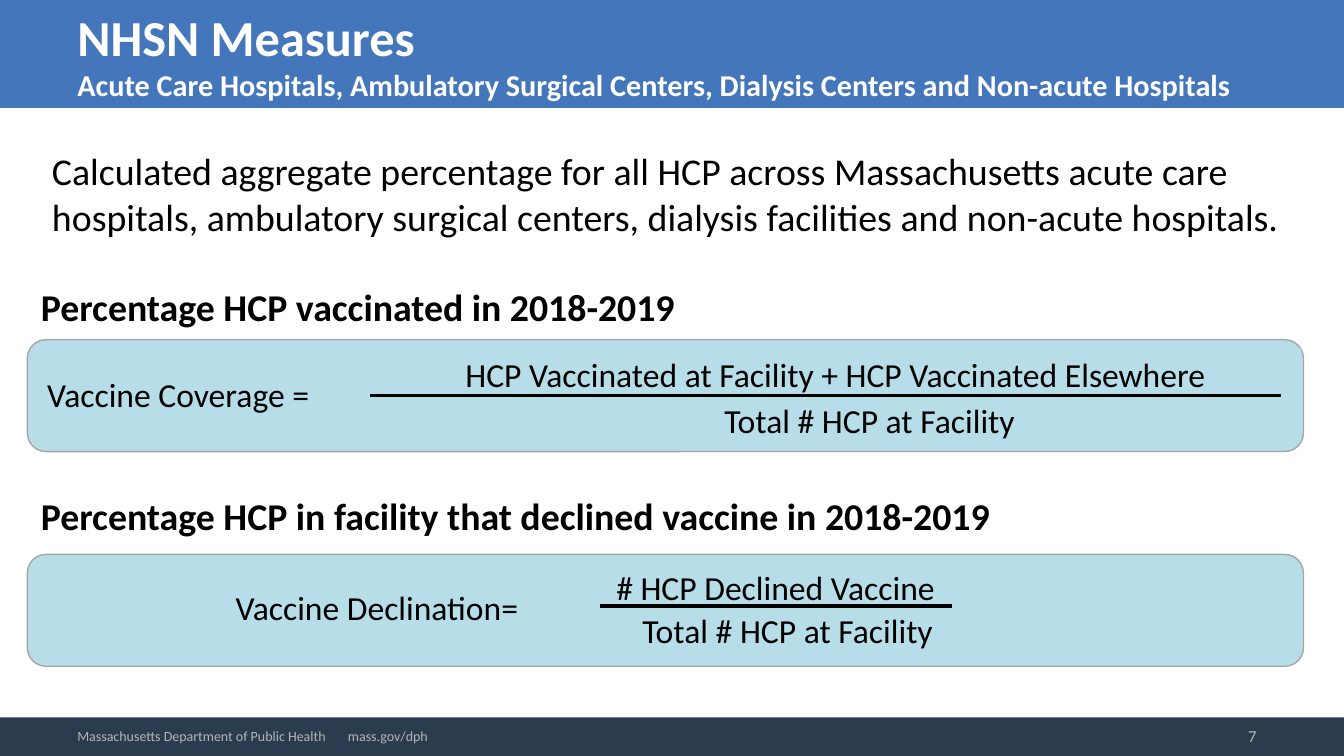
from dataclasses import dataclass

from lxml.etree import SubElement
from pptx import Presentation
from pptx.dml.color import RGBColor
from pptx.enum.shapes import MSO_CONNECTOR, MSO_SHAPE
from pptx.enum.text import MSO_ANCHOR, MSO_AUTO_SIZE, PP_ALIGN
from pptx.oxml.ns import qn
from pptx.util import Cm, Pt

BLUE = RGBColor(0x43, 0x76, 0xBB)
NAVY = RGBColor(0x2A, 0x3C, 0x4E)
PALE = RGBColor(0xB7, 0xDE, 0xE8)
GREY = RGBColor(0xA6, 0xA6, 0xA6)
SILVER = RGBColor(0xB5, 0xB5, 0xB5)
WHITE = RGBColor(0xFF, 0xFF, 0xFF)
BLACK = RGBColor(0, 0, 0)
FONT = "Calibri"
WIDTH, HEIGHT = 33.87, 19.05


@dataclass(frozen=True)
class Box:
    left: float
    top: float
    width: float
    height: float

    def lengths(self) -> tuple:
        return Cm(self.left), Cm(self.top), Cm(self.width), Cm(self.height)


@dataclass(frozen=True)
class Term:
    text: str
    box: Box
    align: PP_ALIGN = PP_ALIGN.CENTER


@dataclass(frozen=True)
class Formula:
    heading: str
    heading_box: Box
    panel: Box
    terms: tuple[Term, ...]
    bar_left: float
    bar_right: float
    bar_y: float


FORMULAS = (
    Formula(
        "Percentage HCP vaccinated in 2018-2019",
        Box(0.69, 6.99, 26.8, 1.5),
        Box(0.69, 8.56, 32.16, 2.82),
        (
            Term("Vaccine Coverage =", Box(0.94, 9.3, 13.72, 1.3), PP_ALIGN.LEFT),
            Term("HCP Vaccinated at Facility + HCP Vaccinated Elsewhere",
                 Box(9.32, 8.79, 23.47, 1.3)),
            Term("Total # HCP at Facility", Box(15.11, 9.96, 13.61, 1.3)),
        ),
        9.32, 32.28, 9.96,
    ),
    Formula(
        "Percentage HCP in facility that declined vaccine in 2018-2019",
        Box(0.69, 12.24, 32.16, 1.5),
        Box(0.69, 13.97, 32.16, 2.82),
        (
            Term("Vaccine Declination=", Box(5.69, 14.66, 9.42, 1.27), PP_ALIGN.LEFT),
            Term("# HCP Declined Vaccine", Box(13.64, 14.15, 11.81, 1.27)),
            Term("Total # HCP at Facility", Box(13.41, 15.24, 12.88, 1.27)),
        ),
        15.11, 23.98, 15.27,
    ),
)


def add_run(p, text: str, *, size: float, color: RGBColor = BLACK, bold: bool = False) -> None:
    r = p.add_run()
    r.text = text
    r.font.name = FONT
    r.font.size = Pt(size)
    r.font.bold = bold
    r.font.color.rgb = color


def write(sp, text: str, *, size: float, color: RGBColor = BLACK, bold: bool = False,
          align: PP_ALIGN = PP_ALIGN.LEFT, anchor: MSO_ANCHOR = MSO_ANCHOR.TOP,
          inset: tuple[float, float] = (0.25, 0.13)):
    tf = sp.text_frame
    tf.word_wrap = True
    tf.auto_size = MSO_AUTO_SIZE.NONE
    tf.vertical_anchor = anchor
    tf.margin_left = tf.margin_right = Cm(inset[0])
    tf.margin_top = tf.margin_bottom = Cm(inset[1])
    p = tf.paragraphs[0]
    p.alignment = align
    p.space_before = Pt(0)
    add_run(p, text, size=size, color=color, bold=bold)
    return p


def place(sp, box: Box):
    sp.left, sp.top, sp.width, sp.height = box.lengths()
    return sp


def add_box(shapes, box: Box, fill: RGBColor, kind: MSO_SHAPE = MSO_SHAPE.RECTANGLE):
    sp = shapes.add_shape(kind, *box.lengths())
    sp.shadow.inherit = False
    sp.fill.solid()
    sp.fill.fore_color.rgb = fill
    sp.line.fill.background()
    return sp


def add_formula(s, formula: Formula) -> None:
    shapes = s.shapes.add_group_shape().shapes
    panel = add_box(shapes, formula.panel, PALE, MSO_SHAPE.ROUNDED_RECTANGLE)
    panel.line.color.rgb = GREY
    panel.line.width = Pt(1)
    for term in formula.terms:
        write(add_box(shapes, term.box, PALE), term.text, size=24, align=term.align)
    y = Cm(formula.bar_y)
    bar = shapes.add_connector(MSO_CONNECTOR.STRAIGHT, Cm(formula.bar_left), y,
                               Cm(formula.bar_right), y)
    bar.line.color.rgb = BLACK
    bar.line.width = Pt(2.25)
    SubElement(bar.element.spPr, qn("a:effectLst"))
    heading = s.shapes.add_textbox(*formula.heading_box.lengths())
    write(heading, formula.heading, size=27, bold=True, inset=(0.34, 0.17))


def add_footer(s) -> None:
    sp = s.shapes.add_textbox(*Box(24.33, 18.03, 7.59, 1.02).lengths())
    write(sp, "7", size=12, color=SILVER, align=PP_ALIGN.RIGHT, anchor=MSO_ANCHOR.MIDDLE)
    sp = s.shapes.add_textbox(*Box(1.7, 18.08, 10.59, 0.94).lengths())
    p = write(sp, "Massachusetts Department of Public Health\tmass.gov/dph", size=10,
              color=SILVER, anchor=MSO_ANCHOR.MIDDLE)
    tabs = SubElement(p._p.get_or_add_pPr(), qn("a:tabLst"))
    SubElement(tabs, qn("a:tab"), pos=str(Cm(6.82)), algn="l")


def main() -> None:
    prs = Presentation()
    prs.slide_width, prs.slide_height = Cm(WIDTH), Cm(HEIGHT)
    s = prs.slides.add_slide(prs.slide_layouts[1])

    title = place(s.shapes.title, Box(1.7, 0, 31.6, 2.74))
    p = write(title, "NHSN Measures", size=36, color=WHITE, bold=True,
              anchor=MSO_ANCHOR.MIDDLE)
    p.add_line_break()
    add_run(p, "Acute Care Hospitals, Ambulatory Surgical Centers, Dialysis Centers "
               "and Non-acute Hospitals", size=21.6, color=WHITE, bold=True)

    for box, fill in ((Box(0, 0, WIDTH, 2.72), BLUE), (Box(0, 18.08, WIDTH, 0.97), NAVY)):
        title.element.addprevious(add_box(s.shapes, box, fill).element)

    body = place(s.placeholders[1], Box(0, 3.56, 33.3, 2.64))
    p = write(body, "Calculated aggregate percentage for all HCP across Massachusetts acute "
                    "care hospitals, ambulatory surgical centers, dialysis facilities and "
                    "non-acute hospitals.", size=27, inset=(0.34, 0.17))
    pPr = p._p.get_or_add_pPr()
    pPr.set("marL", str(Cm(0.97)))
    pPr.set("indent", "0")
    SubElement(pPr, qn("a:buNone"))

    for formula in FORMULAS:
        add_formula(s, formula)
    add_footer(s)
    prs.save("out.pptx")


if __name__ == "__main__":
    main()
